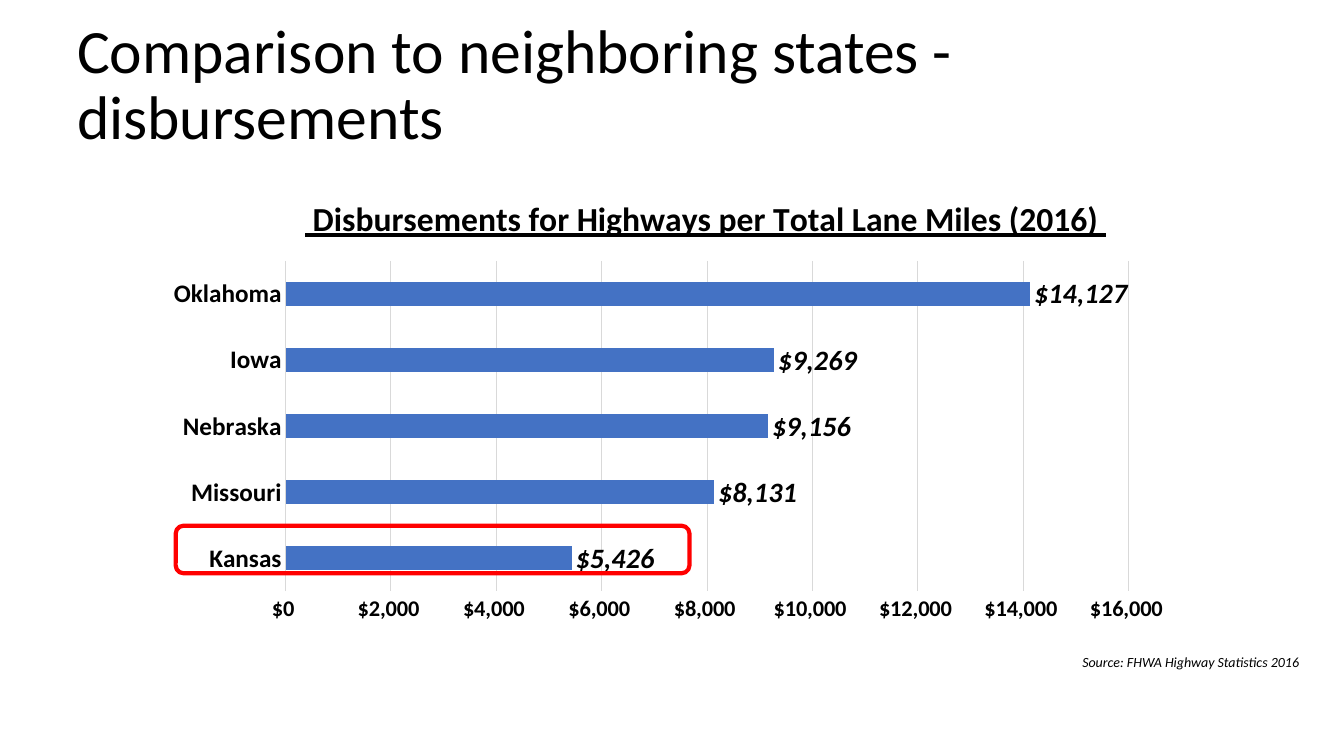
"""Build a slide comparing highway disbursements in neighbouring states."""
from lxml.etree import SubElement
from pptx import Presentation
from pptx.chart.data import CategoryChartData
from pptx.dml.color import RGBColor
from pptx.enum.chart import XL_CHART_TYPE as ChartType, XL_LABEL_POSITION as LabelPosition
from pptx.enum.chart import XL_TICK_MARK as TickMark
from pptx.enum.shapes import MSO_SHAPE as Shape
from pptx.enum.text import MSO_ANCHOR as Anchor
from pptx.oxml.ns import qn
from pptx.util import Pt

FONT = "Calibri"
BLACK, GREY, BLUE, RED = "000000", "D9D9D9", "4472C4", "FF0000"
MONEY = '"$"#,##0_);\\("$"#,##0\\)'
HEADING = "Comparison to neighboring states - disbursements"
CHART_TITLE = " Disbursements for Highways per Total Lane Miles (2016) "
SOURCE = "Source: FHWA Highway Statistics 2016"
DISBURSEMENTS = {"Kansas": 5426, "Missouri": 8131, "Nebraska": 9156,
                 "Iowa": 9269, "Oklahoma": 14127}
HEADING_BOX = (48, 9.5, 888, 104.5)
CHART_BOX = (110, 126, 740, 325)
SOURCE_BOX = (766, 463.5, 186, 19.5)
KANSAS_BOX = (125.5, 375.5, 367, 34)
PLOT_LAYOUT = {"x": 0.127, "y": 0.186, "w": 0.814, "h": 0.726}
TITLE_LAYOUT = {"x": 0.14, "y": 0.03}


def color(value):
    return RGBColor.from_string(value)


def points(box):
    return [Pt(length) for length in box]


def style(font, size, bold=False, italic=False, underline=False):
    font.name, font.size = FONT, Pt(size)
    font.bold, font.italic, font.underline = bold, italic, underline
    font.color.rgb = color(BLACK)


def outline(line, value, width):
    line.color.rgb = color(value)
    line.width = Pt(width)


def add_text(page, text, box, anchor=Anchor.TOP, spacing=1.0, **look):
    frame = page.shapes.add_textbox(*points(box)).text_frame
    frame.word_wrap = True
    frame.vertical_anchor = anchor
    para = frame.paragraphs[0]
    para.line_spacing = spacing
    span = para.add_run()
    span.text = text
    style(span.font, **look)


def set_layout(parent, index, fractions):
    for old in parent.findall(qn("c:layout")):
        parent.remove(old)
    layout = SubElement(parent, qn("c:layout"))
    parent.insert(index, layout)
    manual = SubElement(layout, qn("c:manualLayout"))
    if "w" in fractions:
        SubElement(manual, qn("c:layoutTarget")).set("val", "inner")
    for side in "xy":
        SubElement(manual, qn(f"c:{side}Mode")).set("val", "edge")
    for name, fraction in fractions.items():
        SubElement(manual, qn(f"c:{name}")).set("val", str(fraction))


def add_bars(page):
    data = CategoryChartData(number_format=MONEY)
    data.categories = list(DISBURSEMENTS)
    data.add_series("Series 1", list(DISBURSEMENTS.values()))
    chart = page.shapes.add_chart(ChartType.BAR_CLUSTERED, *points(CHART_BOX), data).chart
    style(chart.font, 10)
    chart.has_legend = False
    chart.has_title = True
    span = chart.chart_title.text_frame.paragraphs[0].add_run()
    span.text = CHART_TITLE
    style(span.font, 24, bold=True, underline=True)

    for axis, size in ((chart.category_axis, 18), (chart.value_axis, 16)):
        style(axis.tick_labels.font, size, bold=True)
        axis.major_tick_mark = axis.minor_tick_mark = TickMark.NONE
    outline(chart.category_axis.format.line, GREY, 0.75)
    values = chart.value_axis
    values.minimum_scale, values.maximum_scale, values.major_unit = 0, 16000, 2000
    values.format.line.fill.background()
    outline(values.major_gridlines.format.line, GREY, 0.75)
    values.tick_labels.number_format = MONEY
    values.tick_labels.number_format_is_linked = False

    plot = chart.plots[0]
    plot.gap_width = 182
    plot.vary_by_categories = False
    series = plot.series[0]
    series.format.fill.solid()
    series.format.fill.fore_color.rgb = color(BLUE)
    labels = series.data_labels
    labels.show_value = True
    labels.position = LabelPosition.OUTSIDE_END
    labels.number_format = MONEY
    labels.number_format_is_linked = False
    style(labels.font, 20, bold=True, italic=True)

    root = chart.element.find(qn("c:chart"))
    set_layout(root.find(qn("c:plotArea")), 0, PLOT_LAYOUT)
    set_layout(root.find(qn("c:title")), 1, TITLE_LAYOUT)


def add_highlight(page):
    frame = page.shapes.add_shape(Shape.ROUNDED_RECTANGLE, *points(KANSAS_BOX))
    frame.shadow.inherit = False
    frame.fill.background()
    outline(frame.line, RED, 3)


def main():
    deck = Presentation()
    deck.slide_width, deck.slide_height = Pt(960), Pt(540)
    page = deck.slides.add_slide(deck.slide_layouts[6])
    add_text(page, HEADING, HEADING_BOX, anchor=Anchor.MIDDLE, spacing=0.9, size=44)
    add_bars(page)
    add_text(page, SOURCE, SOURCE_BOX, size=10, italic=True)
    add_highlight(page)
    deck.save("out.pptx")


if __name__ == "__main__":
    main()
